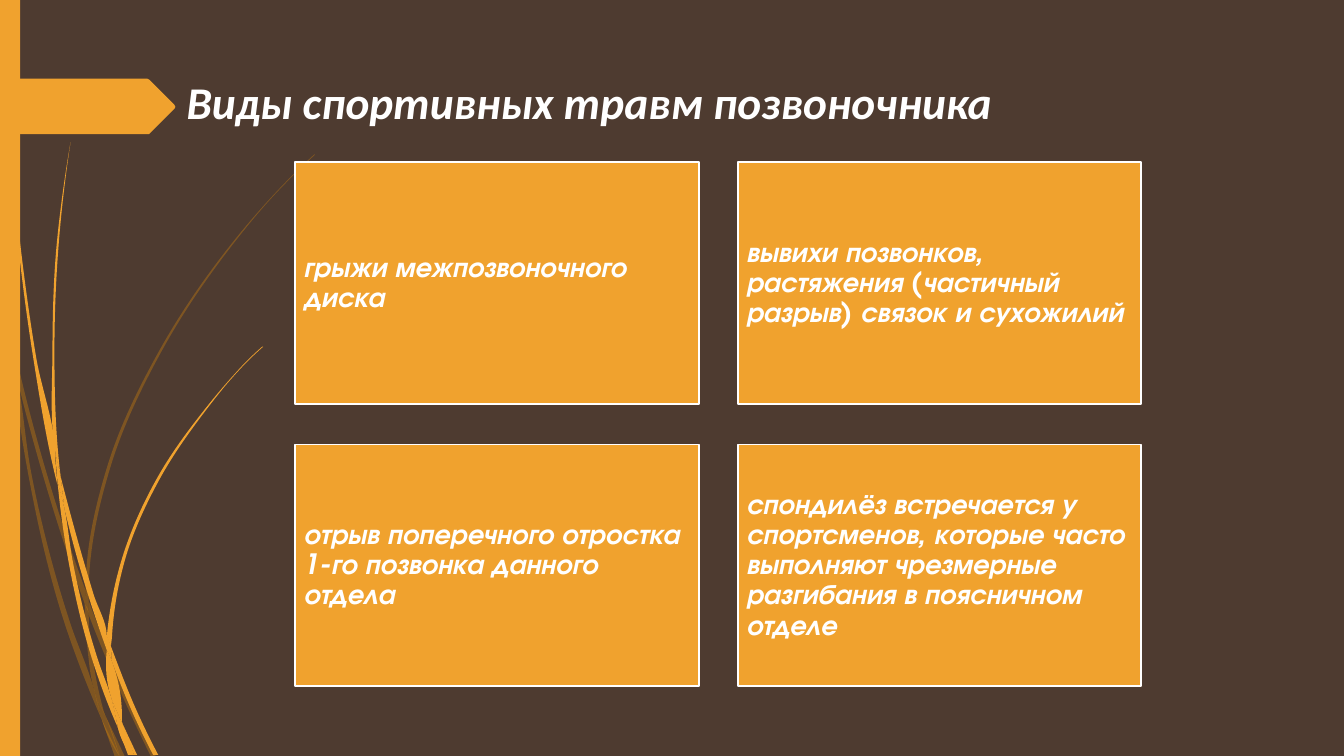
from dataclasses import dataclass
from math import dist

from lxml.etree import SubElement
from pptx import Presentation
from pptx.dml.color import RGBColor
from pptx.enum.shapes import MSO_SHAPE
from pptx.enum.text import MSO_ANCHOR, MSO_AUTO_SIZE, PP_ALIGN
from pptx.oxml.ns import qn
from pptx.util import Inches, Pt


@dataclass(frozen=True)
class Theme:
    background: str = "4E3B30"
    accent: str = "F0A22E"
    shade: str = "C87D0E"
    text: str = "FFFFFF"
    title_font: str = "Calibri"
    body_font: str = "TeX Gyre Adventor"
    title_size: float = 32.4
    body_size: float = 20
    border_width: float = 1.25
    shade_opacity: int = 40


TITLE = "Виды спортивных травм позвоночника"
CARDS = (
    "грыжи межпозвоночного диска",
    "вывихи позвонков, растяжения (частичный разрыв) связок и сухожилий",
    "отрыв поперечного отростка 1-го позвонка данного отдела",
    "спондилёз встречается у спортсменов, которые часто выполняют "
    "чрезмерные разгибания в поясничном отделе",
)

# Each blade of grass is a closed outline made of smooth edges, in inches
SHADED_BLADES = (
    (((0.11, 3.5), (0.09, 3.22), (0, 2.82)), ((0, 2.99), (0.1, 3.44), (0.11, 3.5))),
    (((0.14, 3.45), (0.17, 3.76)), ((0.17, 3.76), (0.58, 5.22), (0.84, 5.99)),
     ((0.85, 5.86), (0.62, 5.2), (0.14, 3.45))),
    (((0.88, 5.96), (0.88, 6.1)), ((0.88, 6.1), (1.23, 6.94), (1.5, 7.51)),
     ((1.55, 7.51), (1.27, 6.92), (0.92, 6.07), (0.88, 5.96))),
    (((1.05, 7.11), (1.19, 7.51)), ((1.24, 7.51), (1.05, 7.11))),
    (((0.11, 3.5), (0.28, 4.7), (0.65, 6.21), (0.92, 6.93), (1.01, 7.14)),
     ((0.99, 7.07), (0.93, 6.83), (0.7, 6.19), (0.31, 4.69), (0.17, 3.76), (0.11, 3.5))),
    (((0.84, 5.99), (0.87, 6.46), (0.93, 6.83), (0.96, 6.92), (1.05, 7.11)),
     ((1.03, 7.06), (0.91, 6.46), (0.88, 6.1), (0.88, 6.08), (0.84, 5.99))),
    (((0.88, 5.96), (0.88, 5.84), (1.1, 4.62), (1.6, 3.49), (2.29, 2.45), (2.68, 1.98),
      (2.9, 1.75), (3.12, 1.54)),
     ((3.12, 1.53), (2.89, 1.75), (2.68, 1.97), (2.28, 2.44), (1.58, 3.48), (1.07, 4.61),
      (0.85, 5.84), (0.85, 5.86))),
    (((1.01, 7.14), (1.14, 7.51)), ((1.19, 7.51), (1.01, 7.14))),
    (((0.88, 6.08), (0.88, 6.1)), ((0.88, 5.96), (0.85, 5.86)), ((0.84, 5.99), (0.88, 6.08))),
    (((0.93, 6.83), (0.99, 7.07), (1.01, 7.14), (1.19, 7.51)),
     ((1.19, 7.51), (1.05, 7.11), (0.96, 6.92), (0.93, 6.83))),
)
BRIGHT_BLADES = (
    (((0.03, 0), (0.04, 0.48), (0.07, 1.1), (0.17, 2.33), (0.33, 3.55), (0.56, 4.77), (0.57, 4.81)),
     ((0.55, 4.57), (0.55, 4.53), (0.36, 3.55), (0.19, 2.32), (0.08, 1.09), (0.05, 0.48), (0.04, 0))),
    (((0.6, 4.72), (0.64, 5.05)), ((0.64, 5.05), (0.88, 5.92), (1.06, 6.45)),
     ((1.06, 6.33), (1.06, 6.31), (0.93, 5.9), (0.6, 4.72))),
    (((1.1, 6.41), (1.11, 6.56)), ((1.11, 6.56), (1.32, 7.08), (1.52, 7.49)),
     ((1.57, 7.49), (1.36, 7.06), (1.13, 6.49), (1.1, 6.41))),
    (((0.57, 4.77), (0.68, 5.57), (0.93, 6.59), (1.11, 7.08), (1.17, 7.22)),
     ((1.16, 7.17), (1.1, 6.91), (0.98, 6.57), (0.72, 5.56), (0.64, 5.05), (0.57, 4.77))),
    (((0.6, 4.72), (0.58, 4.53), (0.54, 3.49), (0.58, 2.45), (0.63, 1.93), (0.7, 1.41)),
     ((0.7, 1.41), (0.62, 1.93), (0.56, 2.45), (0.52, 3.49), (0.55, 4.49), (0.6, 4.72))),
    (((1.22, 7.19), (1.33, 7.49)), ((1.36, 7.49), (1.22, 7.19))),
    (((0.57, 4.77), (0.64, 5.05)), ((0.6, 4.72), (0.55, 4.49)), ((0.55, 4.53), (0.57, 4.77))),
    (((1.11, 6.33), (1.25, 5.52), (1.58, 4.76), (2.05, 4.06), (2.31, 3.74),
      (2.45, 3.59), (2.61, 3.44)),
     ((2.6, 3.44), (2.45, 3.58), (2.31, 3.73), (2.04, 4.05), (1.56, 4.74), (1.22, 5.51),
      (1.06, 6.31)), ((1.1, 6.41), (1.11, 6.33))),
    (((1.17, 7.22), (1.27, 7.49)), ((1.31, 7.49), (1.17, 7.22))),
    (((1.06, 6.45), (1.1, 6.91), (1.16, 7.06), (1.22, 7.19)),
     ((1.21, 7.16), (1.11, 6.56), (1.09, 6.51), (1.06, 6.45))),
    (((1.06, 6.45), (1.09, 6.51), (1.11, 6.56)), ((1.1, 6.41), (1.06, 6.31), (1.06, 6.45))),
    (((1.1, 6.91), (1.16, 7.17), (1.17, 7.22), (1.3, 7.49)),
     ((1.33, 7.49), (1.22, 7.19), (1.16, 7.06), (1.1, 6.91))),
)
ARROW = ((0, 0.78), (1.46, 0.78), (1.48, 0.79), (1.73, 1.04), (1.74, 1.06),
         (1.73, 1.08), (1.48, 1.33), (1.46, 1.33), (0, 1.33))


def blend(first, second, first_weight, second_weight):
    return tuple(a * first_weight + b * second_weight for a, b in zip(first, second))


def edge_controls(points):
    """Return two Bézier control points for each span of a smooth edge."""
    spans = list(zip(points, points[1:]))
    lengths = [dist(*span) for span in spans]
    slopes = [blend(end, start, 1 / h, -1 / h) for (start, end), h in zip(spans, lengths)]
    inner = [blend(slopes[i], slopes[i + 1], lengths[i + 1] / (lengths[i] + lengths[i + 1]),
                   lengths[i] / (lengths[i] + lengths[i + 1])) for i in range(len(spans) - 1)]
    first = blend(slopes[0], inner[0], 2, -1) if inner else slopes[0]
    last = blend(slopes[-1], inner[-1], 2, -1) if inner else slopes[-1]
    tangents = [first, *inner, last]
    return [(blend(start, tangents[i], 1, lengths[i] / 3),
             blend(end, tangents[i + 1], 1, -lengths[i] / 3))
            for i, (start, end) in enumerate(spans)]


def write_text(frame, text, *, font, size, color, anchor, margins, line_spacing=1.0):
    frame.word_wrap = True
    frame.auto_size = MSO_AUTO_SIZE.NONE
    frame.vertical_anchor = anchor
    frame.margin_left = frame.margin_right = Inches(margins[0])
    frame.margin_top = frame.margin_bottom = Inches(margins[1])
    paragraph = frame.paragraphs[0]
    paragraph.alignment = PP_ALIGN.LEFT
    paragraph.line_spacing = line_spacing
    run = paragraph.add_run()
    run.text = text
    run.font.name = font
    run.font.size = Pt(size)
    run.font.bold = run.font.italic = True
    run.font.color.rgb = RGBColor.from_string(color)


class SlideBuilder:
    def __init__(self, slide, theme):
        self.slide = slide
        self.theme = theme

    def background(self):
        fill = self.slide.background.fill
        fill.solid()
        fill.fore_color.rgb = RGBColor.from_string(self.theme.background)

    def paint(self, shape, color, opacity=100):
        shape.shadow.inherit = False
        shape.fill.solid()
        shape.fill.fore_color.rgb = RGBColor.from_string(color)
        shape.line.fill.background()
        if opacity < 100:
            color_element = shape.element.spPr.find(f"{qn('a:solidFill')}/{qn('a:srgbClr')}")
            SubElement(color_element, qn("a:alpha")).set("val", str(opacity * 1000))

    def outline(self, points, color, opacity=100):
        start, *others = [(Inches(x), Inches(y)) for x, y in points]
        builder = self.slide.shapes.build_freeform(*start)
        builder.add_line_segments(others, close=True)
        shape = builder.convert_to_shape()
        self.paint(shape, color, opacity)
        return shape

    def blade(self, edges, color, opacity=100):
        shape = self.outline([point for edge in edges for point in edge], color, opacity)
        # Bend the spans of each edge; the joins between edges stay straight
        controls = [pair for edge in edges for pair in (None, *edge_controls(edge))][1:]
        for segment, pair in zip(list(shape.element.iter(qn("a:lnTo"))), controls):
            if pair:
                segment.tag = qn("a:cubicBezTo")
                for index, (x, y) in enumerate(pair):
                    point = SubElement(segment, qn("a:pt"))
                    point.set("x", str(Inches(x) - shape.left))
                    point.set("y", str(Inches(y) - shape.top))
                    segment.insert(index, point)

    def rectangle(self, left, top, width, height):
        shape = self.slide.shapes.add_shape(
            MSO_SHAPE.RECTANGLE, Inches(left), Inches(top), Inches(width), Inches(height))
        self.paint(shape, self.theme.accent)
        return shape

    def card(self, text, left, top, width, height):
        shape = self.rectangle(left, top, width, height)
        shape.line.color.rgb = RGBColor.from_string(self.theme.text)
        shape.line.width = Pt(self.theme.border_width)
        write_text(shape.text_frame, text, font=self.theme.body_font, size=self.theme.body_size,
                   color=self.theme.text, anchor=MSO_ANCHOR.MIDDLE, margins=(0.08, 0.08),
                   line_spacing=0.9)

    def title(self, text, left, top, width, height):
        shape = self.slide.shapes.title
        shape.left, shape.top = Inches(left), Inches(top)
        shape.width, shape.height = Inches(width), Inches(height)
        write_text(shape.text_frame, text, font=self.theme.title_font, size=self.theme.title_size,
                   color=self.theme.text, anchor=MSO_ANCHOR.TOP, margins=(0.1, 0.05))


def main():
    presentation = Presentation()
    presentation.slide_width, presentation.slide_height = Inches(13.33), Inches(7.5)
    slide = presentation.slides.add_slide(presentation.slide_layouts[5])
    theme = Theme()
    builder = SlideBuilder(slide, theme)
    builder.background()
    # Grass, side bar and arrow
    for edges in SHADED_BLADES:
        builder.blade(edges, theme.shade, theme.shade_opacity)
    for edges in BRIGHT_BLADES:
        builder.blade(edges, theme.accent)
    builder.rectangle(0, 0, 0.2, 7.5)
    builder.outline(ARROW, theme.accent)
    # Title and two-by-two grid of cards
    builder.title(TITLE, 1.75, 0.69, 9.75, 0.78)
    for index, text in enumerate(CARDS):
        row, column = divmod(index, 2)
        builder.card(text, 2.93 + 4.39 * column, 1.61 + 2.8 * row, 4, 2.4)
    presentation.save("out.pptx")


if __name__ == "__main__":
    main()
